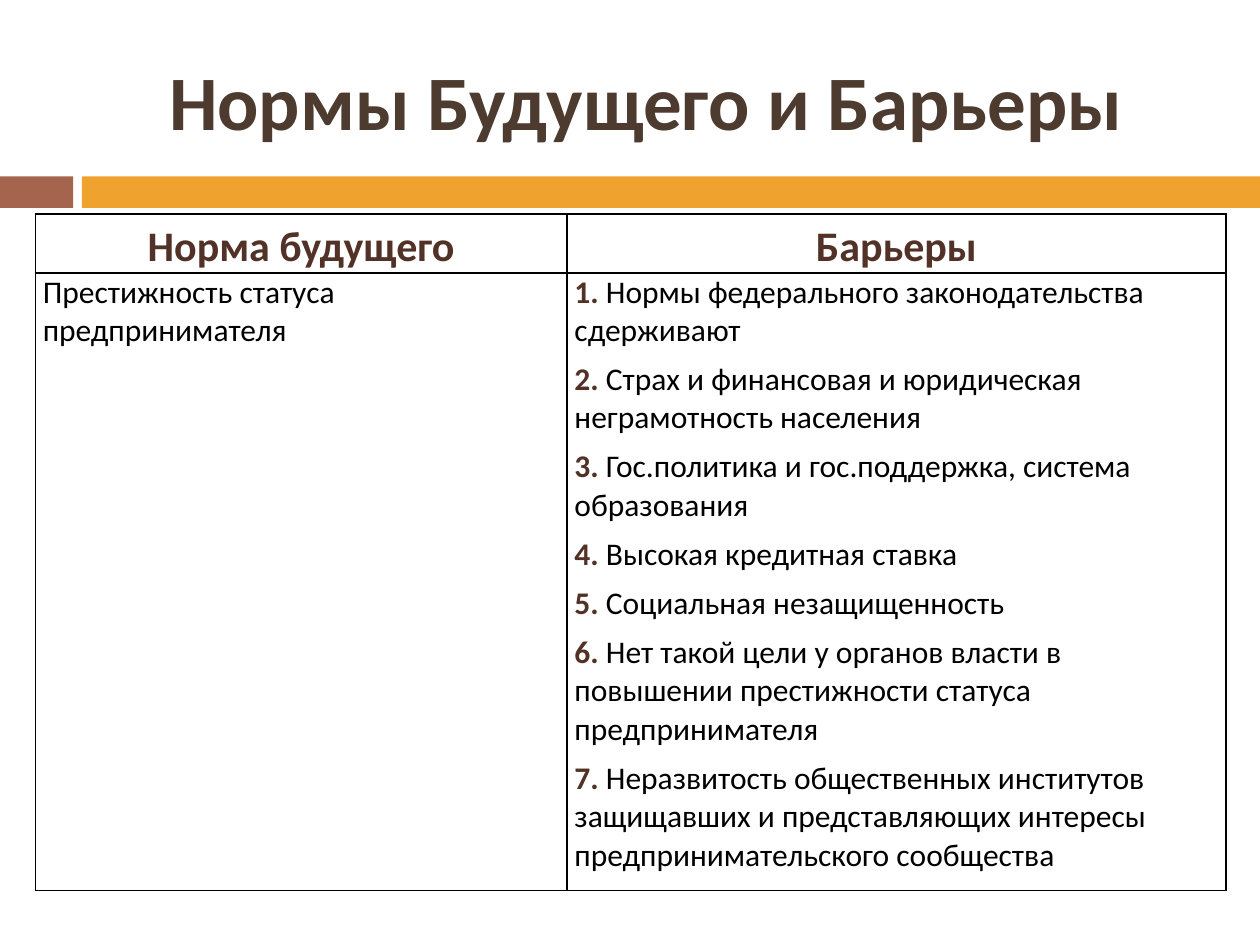
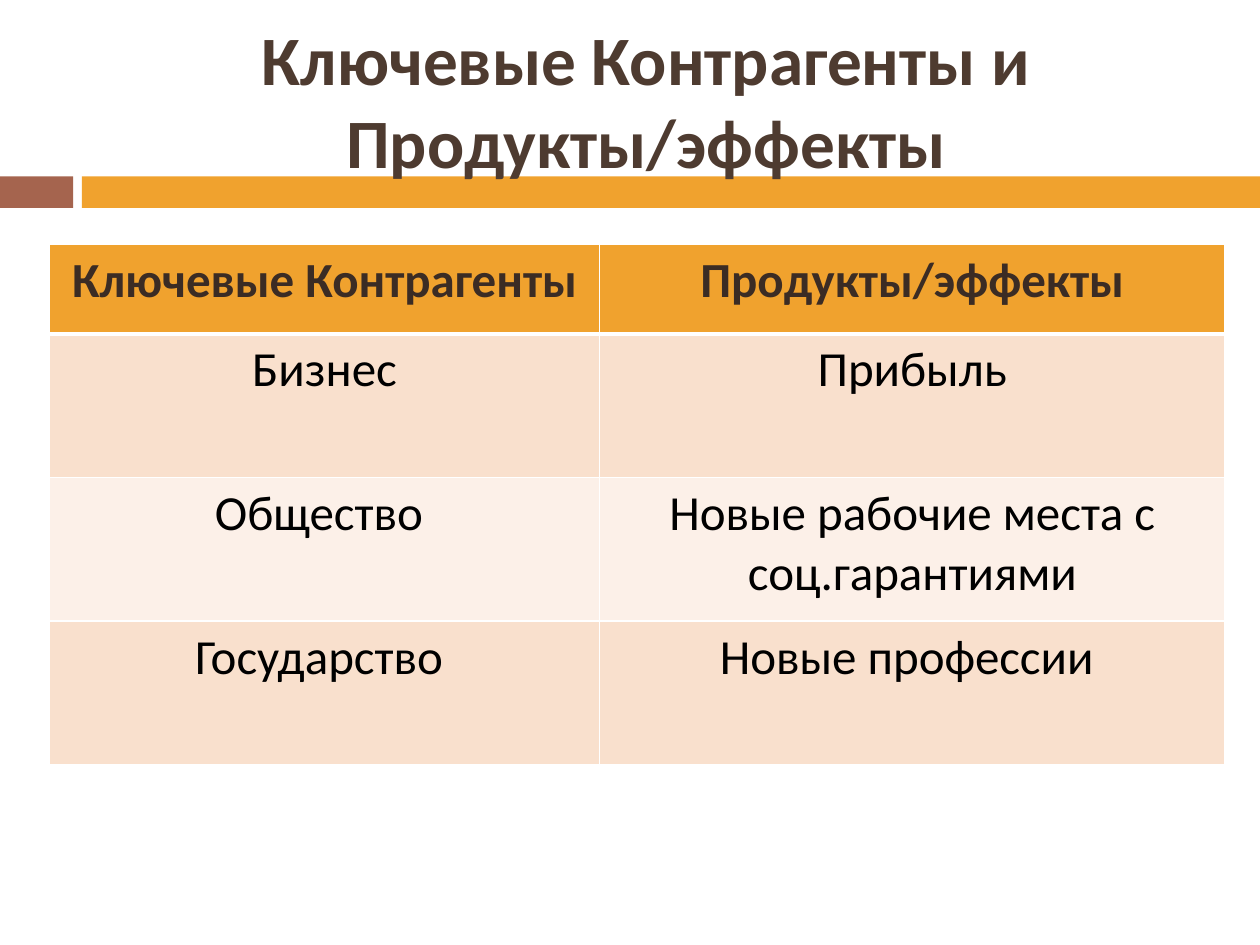
from lxml import etree
from pptx import Presentation
from pptx.dml.color import RGBColor
from pptx.enum.shapes import MSO_SHAPE
from pptx.enum.text import MSO_ANCHOR, MSO_AUTO_SIZE, PP_ALIGN
from pptx.oxml.ns import qn
from pptx.util import Inches, Pt

FONT = "Calibri"
BROWN = RGBColor(0x4E, 0x3B, 0x30)
DARK_BROWN = RGBColor(0x3B, 0x2C, 0x24)
RUST = RGBColor(0x52, 0x32, 0x27)
BRICK = RGBColor(0xA5, 0x64, 0x4E)
ORANGE = RGBColor(0xF0, 0xA2, 0x2E)
PEACH = RGBColor(0xF9, 0xE0, 0xCD)
CREAM = RGBColor(0xFC, 0xF0, 0xE8)
BLACK = RGBColor(0, 0, 0)
WHITE = RGBColor(0xFF, 0xFF, 0xFF)

BANDS = [(0, 0.58, BRICK), (0.65, 9.35, ORANGE)]
BAND_TOP, BAND_HEIGHT = 1.4, 0.25
TITLE_BOX = (0.67, 0.25, 8.92, 1.08)

NORMS_TITLE = "Нормы Будущего и Барьеры"
NORMS_HEADER = ["Норма будущего", "Барьеры"]
NORM = "Престижность статуса предпринимателя"
BARRIERS = [
    "Нормы федерального законодательства сдерживают",
    "Страх и финансовая и юридическая неграмотность населения",
    "Гос.политика и гос.поддержка, система образования",
    "Высокая кредитная ставка",
    "Социальная незащищенность",
    "Нет такой цели у органов власти в повышении престижности статуса предпринимателя",
    "Неразвитость общественных институтов защищавших и представляющих интересы "
    "предпринимательского сообщества",
]

PARTIES_TITLE = "Ключевые Контрагенты и Продукты/эффекты"
PARTIES_ROWS = [
    ("Ключевые Контрагенты", "Продукты/эффекты"),
    ("Бизнес", "Прибыль"),
    ("Общество ", "Новые рабочие места с соц.гарантиями"),
    ("Государство ", "Новые профессии "),
]


def add_run(paragraph, text, size, color, bold=False):
    run = paragraph.add_run()
    run.text = text
    run.font.name = FONT
    run.font.size = Pt(size)
    run.font.bold = bold
    run.font.color.rgb = color


def move_bands_to_layout(slide):
    for left, width, color in BANDS:
        band = slide.shapes.add_shape(
            MSO_SHAPE.RECTANGLE, Inches(left), Inches(BAND_TOP), Inches(width), Inches(BAND_HEIGHT))
        band.shadow.inherit = False
        band.fill.solid()
        band.fill.fore_color.rgb = color
        band.line.fill.background()
        slide.slide_layout.shapes.element.append(band.element)


def add_titled_slide(prs, heading, size):
    slide = prs.slides.add_slide(prs.slide_layouts[5])
    title = slide.shapes.title
    title.left, title.top, title.width, title.height = map(Inches, TITLE_BOX)
    frame = title.text_frame
    frame.auto_size = MSO_AUTO_SIZE.NONE
    frame.vertical_anchor = MSO_ANCHOR.MIDDLE
    frame.paragraphs[0].alignment = PP_ALIGN.CENTER
    add_run(frame.paragraphs[0], heading, size, BROWN, True)
    return slide


def add_grid(slide, left, top, widths, heights):
    grid = slide.shapes.add_table(
        len(heights), len(widths), Inches(left), Inches(top),
        Inches(sum(widths)), Inches(sum(heights))).table
    grid.horz_banding = grid.first_row = False
    for column, width in zip(grid.columns, widths):
        column.width = Inches(width)
    for row, height in zip(grid.rows, heights):
        row.height = Inches(height)
    return grid


def set_borders(cell, color, top=1, bottom=1):
    properties = cell._tc.get_or_add_tcPr()
    for index, (side, width) in enumerate(zip("LRTB", (1, 1, top, bottom))):
        line = etree.Element(qn(f"a:ln{side}"), w=str(Pt(width)))
        fill = etree.SubElement(line, qn("a:solidFill"))
        etree.SubElement(fill, qn("a:srgbClr"), val=str(color))
        properties.insert(index, line)


def build_norms(prs):
    slide = add_titled_slide(prs, NORMS_TITLE, 44)
    move_bands_to_layout(slide)
    grid = add_grid(slide, 0.28, 1.7, (4.22, 5.23), (0.44, 4.9))
    for cell in grid.iter_cells():
        cell.margin_left = cell.margin_right = Inches(0.06)
        cell.margin_top = cell.margin_bottom = 0
        cell.fill.background()
        set_borders(cell, BLACK)
    for column, heading in enumerate(NORMS_HEADER):
        paragraph = grid.cell(0, column).text_frame.paragraphs[0]
        paragraph.alignment = PP_ALIGN.CENTER
        paragraph.line_spacing = 1.15
        add_run(paragraph, heading, 24, RUST, True)
    add_run(grid.cell(1, 0).text_frame.paragraphs[0], NORM, 18, BLACK)
    frame = grid.cell(1, 1).text_frame
    for number, barrier in enumerate(BARRIERS, 1):
        paragraph = frame.paragraphs[0] if number == 1 else frame.add_paragraph()
        paragraph.space_before = Pt(6)
        add_run(paragraph, f"{number}.", 18, RUST, True)
        add_run(paragraph, f" {barrier}", 18, BLACK)


def build_parties(prs):
    slide = add_titled_slide(prs, PARTIES_TITLE, 39.6)
    grid = add_grid(slide, 0.39, 1.94, (4.37, 4.96), [0.71] + [1.14] * 3)
    for row, texts in enumerate(PARTIES_ROWS):
        is_header = row == 0
        for column, text in enumerate(texts):
            cell = grid.cell(row, column)
            cell.fill.solid()
            cell.fill.fore_color.rgb = ORANGE if is_header else (CREAM, PEACH)[row % 2]
            set_borders(cell, WHITE, 3 if row == 1 else 1, 3 if is_header else 1)
            paragraph = cell.text_frame.paragraphs[0]
            paragraph.alignment = PP_ALIGN.CENTER
            add_run(paragraph, text, 28, DARK_BROWN if is_header else BLACK, is_header)


def main():
    prs = Presentation()
    prs.slide_width, prs.slide_height = Inches(10), Inches(7.5)
    build_norms(prs)
    build_parties(prs)
    prs.save("out.pptx")


if __name__ == "__main__":
    main()
